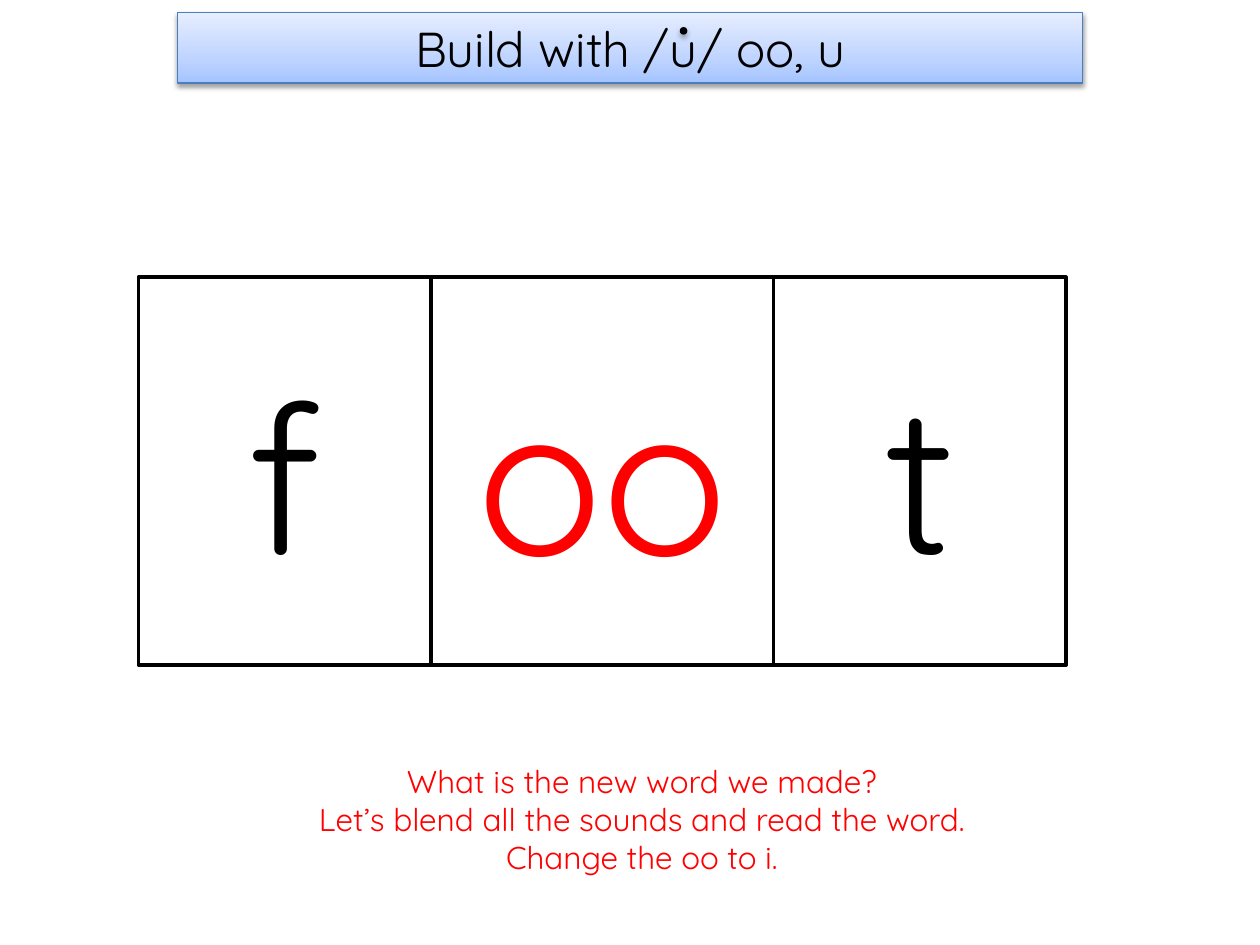
import copy
from dataclasses import dataclass

import pptx
import pptx.dml.color
import pptx.enum.shapes
import pptx.enum.text
import pptx.oxml
import pptx.oxml.ns
import pptx.util

SCALE = 9144  # EMU per px, 100 px to the inch
SHAPE = pptx.enum.shapes.MSO_SHAPE
FIT = pptx.enum.text.MSO_AUTO_SIZE
ANCHOR = pptx.enum.text.MSO_ANCHOR
CENTER = pptx.enum.text.PP_ALIGN.CENTER


@dataclass(frozen=True)
class Theme:
    font: str = "Quicksand"
    ink: str = "000000"
    accent: str = "FF0000"
    paper: str = "FFFFFF"
    edge: str = "4B7EBC"
    fade: tuple = ((0, "A4C4FF"), (0.35, "BFD4FF"), (1, "E6EEFF"))
    title: int = 28
    letter: int = 120
    note: int = 18
    thin: float = 0.75
    thick: float = 2


THEME = Theme()


def px(num):
    return pptx.util.Emu(num * SCALE)


def rgb(code):
    return pptx.dml.color.RGBColor.from_string(code)


def apply(item, form):
    for name, value in form.items():
        setattr(item, name, value)


def place(shape, box):
    apply(shape, dict(zip(("left", "top", "width", "height"), map(px, box))))


def write(shape, lines, size, color, **form):
    frame = shape.text_frame
    frame.text = "\n".join(lines)
    apply(frame, {"word_wrap": True, **form})
    for para in frame.paragraphs:
        para.alignment = CENTER
        apply(para.font, {"name": THEME.font, "size": pptx.util.Pt(size)})
        para.font.color.rgb = rgb(color)


def outline(shape, color, width):
    shape.line.color.rgb = rgb(color)
    shape.line.width = pptx.util.Pt(width)


def block(slide, kind, box, fill, width):
    shape = slide.shapes.add_shape(kind, *map(px, box))
    shape.shadow.inherit = False
    shape.fill.solid()
    shape.fill.fore_color.rgb = rgb(fill)
    outline(shape, THEME.ink, width)
    return shape


def shade(shape, alpha, blur, dist):
    """Drop a soft shadow straight down; blur and dist are in points."""
    shape.shadow.inherit = False
    effects = shape._element.spPr.find(pptx.oxml.ns.qn("a:effectLst"))
    effects.append(pptx.oxml.parse_xml(
        f'<a:outerShdw {pptx.oxml.ns.nsdecls("a")} '
        f'blurRad="{pptx.util.Pt(blur)}" dist="{pptx.util.Pt(dist)}" '
        f'dir="5400000" rotWithShape="0"><a:srgbClr val="{THEME.ink}">'
        f'<a:alpha val="{alpha * 1000}"/></a:srgbClr></a:outerShdw>'))


def blend(shape, stops):
    """Fill from bottom to top through the given colour stops."""
    fill = shape.fill
    fill.gradient()
    fill.gradient_angle = 90
    group = shape._element.spPr.find(".//" + pptx.oxml.ns.qn("a:gsLst"))
    while len(group) < len(stops):
        group.append(copy.deepcopy(group[0]))
    for stop, (spot, color) in zip(fill.gradient_stops, stops):
        stop.position = spot
        stop.color.rgb = rgb(color)


def banner(slide, text):
    title = slide.shapes.title
    place(title, (141, 10, 718, 56))
    blend(title, THEME.fade)
    outline(title, THEME.edge, THEME.thin)
    shade(title, 38, 3.1, 1.6)
    write(title, [text], THEME.title, THEME.ink,
          auto_size=FIT.NONE, vertical_anchor=ANCHOR.MIDDLE)


def dot(slide):
    mark = block(slide, SHAPE.OVAL, (540, 22, 5, 5), THEME.ink, THEME.thin)
    shade(mark, 35, 3.1, 1.8)


def tiles(slide, parts):
    left = 110
    for text, width, color in parts:
        tile = block(slide, SHAPE.RECTANGLE, (left, 220, width, 308),
                     THEME.paper, THEME.thick)
        write(tile, [text], THEME.letter, color,
              vertical_anchor=ANCHOR.MIDDLE)
        left += width


def prompt(slide, lines):
    note = slide.shapes.add_textbox(*map(px, (161, 600, 697, 101)))
    write(note, lines, THEME.note, THEME.accent,
          auto_size=FIT.SHAPE_TO_FIT_TEXT)


def main():
    deck = pptx.Presentation()
    apply(deck, {"slide_width": px(1000), "slide_height": px(750)})
    slide = deck.slides.add_slide(deck.slide_layouts[5])

    # Heading, with the dot above its u
    banner(slide, "Build with /u/ oo, u")
    dot(slide)

    # One tile for each sound
    tiles(slide, (("f", 232, THEME.ink),
                  ("oo", 272, THEME.accent),
                  ("t", 232, THEME.ink)))

    # Teacher's prompt
    prompt(slide, ("What is the new word we made?",
                   "Let’s blend all the sounds and read the word.",
                   "Change the oo to i."))

    deck.save("out.pptx")


if __name__ == "__main__":
    main()
